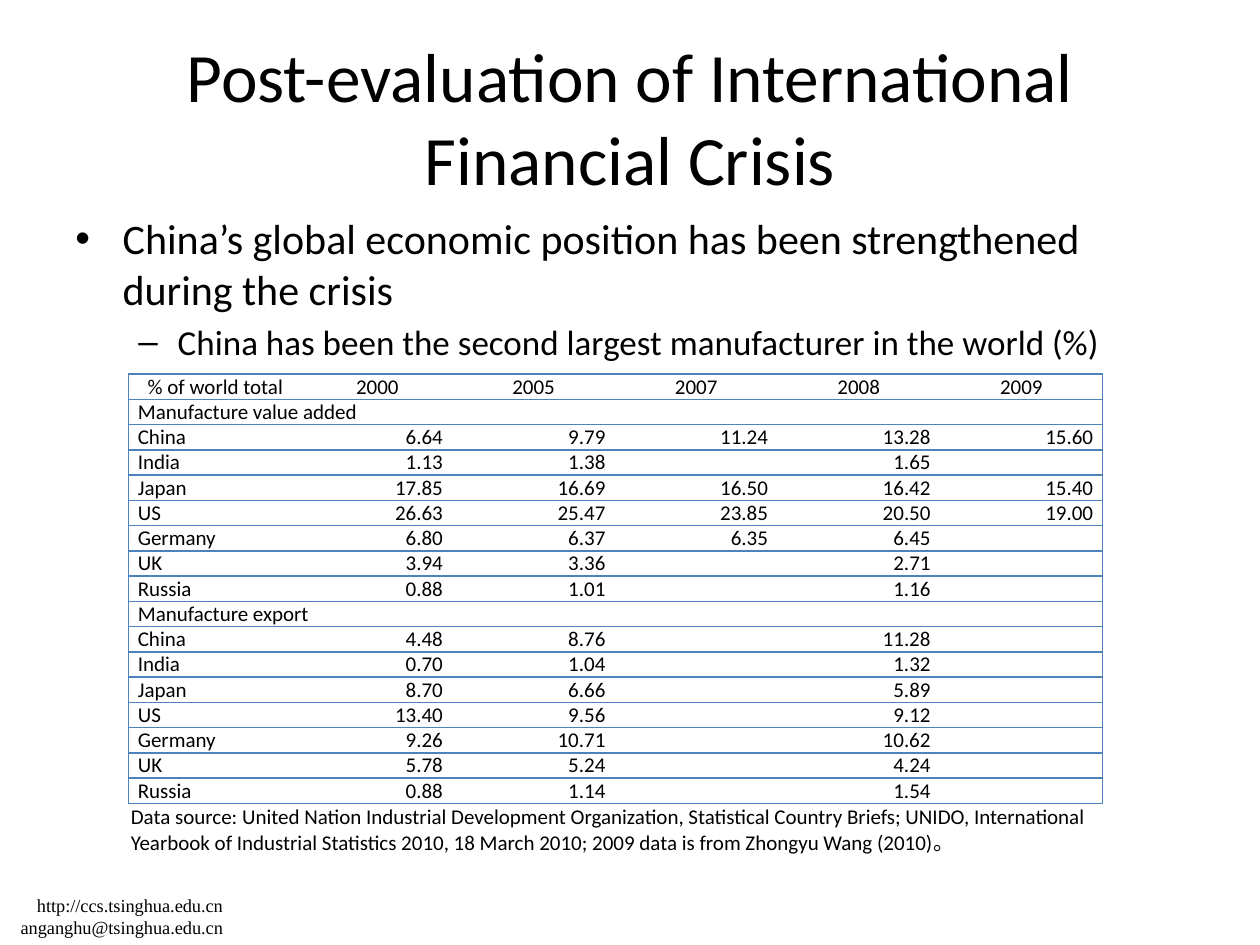
from lxml import etree
from pptx import Presentation
from pptx.dml.color import RGBColor
from pptx.enum.text import MSO_ANCHOR, PP_ALIGN
from pptx.oxml.ns import qn
from pptx.util import Pt

BLACK = RGBColor(0x00, 0x00, 0x00)
WHITE = RGBColor(0xFF, 0xFF, 0xFF)
BLUE = RGBColor(0x4F, 0x81, 0xBD)
LEFT, CENTER, RIGHT = PP_ALIGN.LEFT, PP_ALIGN.CENTER, PP_ALIGN.RIGHT
JUSTIFY = PP_ALIGN.JUSTIFY
TOP, MIDDLE = MSO_ANCHOR.TOP, MSO_ANCHOR.MIDDLE

COLUMN_WIDTHS = [99.4, 85.7] + [92.9] * 4
ROW_HEIGHT = 14.4
HEADER = ["% of world total", "2000", "2005", "2007", "2008", "2009"]
VALUE_ADDED = [
    ["China", "6.64", "9.79", "11.24", "13.28", "15.60"],
    ["India", "1.13", "1.38", "", "1.65", ""],
    ["Japan", "17.85", "16.69", "16.50", "16.42", "15.40"],
    ["US", "26.63", "25.47", "23.85", "20.50", "19.00"],
    ["Germany", "6.80", "6.37", "6.35", "6.45", ""],
    ["UK", "3.94", "3.36", "", "2.71", ""],
    ["Russia", "0.88", "1.01", "", "1.16", ""],
]
EXPORT = [
    ["China", "4.48", "8.76", "", "11.28", ""],
    ["India", "0.70", "1.04", "", "1.32", ""],
    ["Japan", "8.70", "6.66", "", "5.89", ""],
    ["US", "13.40", "9.56", "", "9.12", ""],
    ["Germany", "9.26", "10.71", "", "10.62", ""],
    ["UK", "5.78", "5.24", "", "4.24", ""],
    ["Russia", "0.88", "1.14", "", "1.54", ""],
]
ROWS = [HEADER, ["Manufacture value added"], *VALUE_ADDED,
        ["Manufacture export"], *EXPORT]


def format_runs(p, size, font="Calibri"):
    for r in p.runs:
        r.font.size = Pt(size)
        r.font.name = font
        r.font.color.rgb = BLACK


def add_text(s, box, lines, size, font="Calibri", align=LEFT, anchor=TOP):
    tf = s.shapes.add_textbox(*map(Pt, box)).text_frame
    tf.word_wrap = True
    tf.vertical_anchor = anchor
    tf.text = "\n".join(lines)
    for p in tf.paragraphs:
        p.alignment = align
        format_runs(p, size, font)
    return tf


def set_bullet(p, char, margin, indent):
    pPr = p._p.get_or_add_pPr()
    pPr.set("marL", str(Pt(margin)))
    pPr.set("indent", str(Pt(indent)))
    etree.SubElement(pPr, qn("a:buFont"), typeface="Arial")
    etree.SubElement(pPr, qn("a:buChar"), char=char)


def add_bullets(s, box):
    tf = add_text(s, box, [
        "China’s global economic position has been strengthened during the crisis",
        "China has been the second largest manufacturer in the world (%)",
    ], 24)
    point, detail = tf.paragraphs
    set_bullet(point, "•", 27, -27)
    set_bullet(detail, "–", 58.5, -22.5)
    detail.level = 1
    detail.space_before = Pt(4)
    format_runs(detail, 20)


def set_borders(cell, sides):
    tcPr = cell._tc.get_or_add_tcPr()
    for side in "LRTB":
        ln = etree.SubElement(tcPr, qn(f"a:ln{side}"), w=str(Pt(1)))
        if side in sides:
            fill = etree.SubElement(ln, qn("a:solidFill"))
            etree.SubElement(fill, qn("a:srgbClr"), val=str(BLUE))
        else:
            etree.SubElement(ln, qn("a:noFill"))


def fill_cell(cell, text, align, sides):
    set_borders(cell, sides)
    cell.fill.solid()
    cell.fill.fore_color.rgb = WHITE
    cell.margin_left = cell.margin_right = Pt(5.4)
    cell.margin_top = cell.margin_bottom = 0
    p = cell.text_frame.paragraphs[0]
    p.text = text
    p.alignment = align
    format_runs(p, 12)
    if not text:
        # Keeps an empty cell as low as its row
        etree.SubElement(p._p, qn("a:endParaRPr"), sz="1200")


def add_share_table(s, left, top):
    last = len(COLUMN_WIDTHS) - 1
    table = s.shapes.add_table(
        len(ROWS), len(COLUMN_WIDTHS), Pt(left), Pt(top),
        Pt(sum(COLUMN_WIDTHS)), Pt(ROW_HEIGHT * len(ROWS))).table
    table.first_row = table.horz_banding = False
    for column, width in zip(table.columns, COLUMN_WIDTHS):
        column.width = Pt(width)
    for i, row in enumerate(ROWS):
        table.rows[i].height = Pt(ROW_HEIGHT)
        is_section = len(row) == 1
        if is_section:
            table.cell(i, 0).merge(table.cell(i, last))
        for j in range(last + 1):
            sides = "TB" + ("L" if j == 0 else "") + ("R" if j == last else "")
            if is_section and j == 0:
                sides = "LRTB"
            align = CENTER if row is HEADER else JUSTIFY if j == 0 else RIGHT
            fill_cell(table.cell(i, j), row[j] if j < len(row) else "", align, sides)


def main():
    prs = Presentation()
    prs.slide_width, prs.slide_height = Pt(720), Pt(540)
    s = prs.slides.add_slide(prs.slide_layouts[6])

    # Contact lines
    add_text(s, (-5.8, 507.6, 140.4, 32.4),
             ["http://ccs.tsinghua.edu.cn", "anganghu@tsinghua.edu.cn"],
             10.5, "Times New Roman", RIGHT)
    # Title
    add_text(s, (36, 21.6, 648, 90),
             ["Post-evaluation of International Financial Crisis"],
             39.6, align=CENTER, anchor=MIDDLE)
    # Bullets
    add_bullets(s, (36, 118.1, 648, 356.4))
    # Data source
    add_text(s, (67.7, 455.8, 568.1, 36.7),
             ["Data source: United Nation Industrial Development Organization, "
              "Statistical Country Briefs; UNIDO, International Yearbook of "
              "Industrial Statistics 2010, 18 March 2010; 2009 data is from "
              "Zhongyu Wang (2010)。"], 12)
    # Table of world shares
    add_share_table(s, 73.4, 213.8)

    prs.save("out.pptx")


if __name__ == "__main__":
    main()
